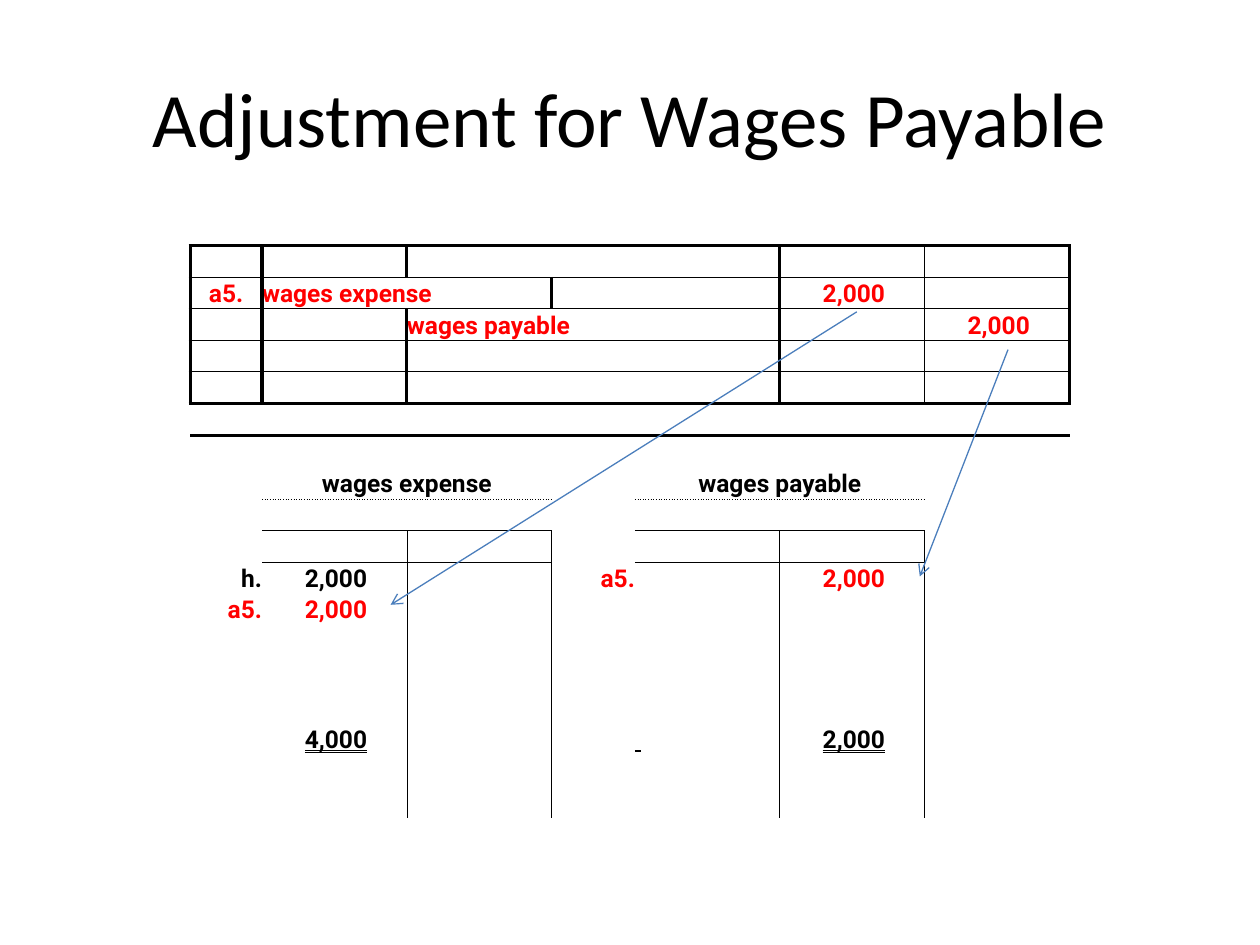
from collections import defaultdict
from itertools import product

from lxml.etree import SubElement
from pptx import Presentation
from pptx.dml.color import RGBColor
from pptx.enum.shapes import MSO_CONNECTOR as Connector
from pptx.enum.text import MSO_ANCHOR as Anchor, MSO_UNDERLINE as Underline, PP_ALIGN as Align
from pptx.oxml.ns import qn
from pptx.util import Inches, Pt

COLORS = {"ink": "000000", "entry": "FF0000", "arrow": "4B7EBC"}
WIDTH, HEIGHT = Inches(10), Inches(7.5)
COLUMNS = [0.57, 1.15, 1.15, 0.66, 1.15, 1.15, 1.15]
ROWS = [0.25] * 5 + [0.26] + [0.25] * 9 + [0.28] + [0.25] * 2
THIN, THICK = 0.5, 2
AMOUNT_INDENT = Inches(0.34)
NO_GRID_STYLE = "{2D5ABB26-0587-4C30-8999-92F81FD0307C}"


def color(name):
    return RGBColor.from_string(COLORS[name])


def add_title(slide, box, text):
    shape = slide.shapes.add_textbox(*box)
    frame = shape.text_frame
    frame.word_wrap = True
    frame.vertical_anchor = Anchor.MIDDLE
    paragraph = frame.paragraphs[0]
    paragraph.text = text
    paragraph.alignment = Align.CENTER
    paragraph.font.name, paragraph.font.size = "Calibri", Pt(44)
    paragraph.font.color.rgb = color("ink")


def add_ledger(slide, left, top):
    """Add the bare grid that carries the journal and both accounts."""
    table = slide.shapes.add_table(
        len(ROWS), len(COLUMNS), left, top,
        Inches(sum(COLUMNS)), Inches(sum(ROWS))).table
    table.first_row = table.horz_banding = False
    table._tbl.tblPr.find(qn("a:tableStyleId")).text = NO_GRID_STYLE
    for column, width in zip(table.columns, COLUMNS):
        column.width = Inches(width)
    for row, height in zip(table.rows, ROWS):
        row.height = Inches(height)
    for cell in table.iter_cells():
        cell.margin_left = cell.margin_right = cell.margin_top = cell.margin_bottom = 0
        cell.vertical_anchor = Anchor.BOTTOM
        # Small empty lines keep the rows at their height
        SubElement(cell.text_frame.paragraphs[0]._p, qn("a:endParaRPr"), sz="1200")
    return table


def write(table, row, column, text, ink="ink", align=Align.LEFT, span=1):
    cell = table.cell(row, column)
    if span > 1:
        cell.merge(table.cell(row, column + span - 1))
    paragraph = cell.text_frame.paragraphs[0]
    paragraph.text = text
    paragraph.alignment = align
    font = paragraph.font
    font.name, font.size, font.bold = "Roboto", Pt(14), True
    font.color.rgb = color(ink)
    return paragraph


def write_amount(table, row, column, text, ink="ink"):
    paragraph = write(table, row, column, text, ink)
    paragraph._p.get_or_add_pPr().set("marL", str(AMOUNT_INDENT))
    paragraph._p.get_or_add_pPr().set("indent", "0")


def write_total(table, row, column, text):
    """Write a total whose double underline starts at the cell's left side."""
    paragraph = write(table, row, column, "\t" + text)
    paragraph.runs[0].font.underline = Underline.DOUBLE_LINE
    properties = paragraph._p.get_or_add_pPr()
    stops = properties.makeelement(qn("a:tabLst"), {})
    SubElement(stops, qn("a:tab"), pos=str(AMOUNT_INDENT), algn="l")
    properties.find(qn("a:defRPr")).addprevious(stops)


def rule_across(borders, edge, columns, width=THIN, dash="solid"):
    for column in columns:
        borders[edge - 1, column]["B"] = borders[edge, column]["T"] = (width, dash)


def rule_down(borders, edge, rows, width=THIN, dash="solid"):
    for row in rows:
        borders[row, edge - 1]["R"] = borders[row, edge]["L"] = (width, dash)


def draw_borders(table, borders):
    for row, column in product(range(len(ROWS)), range(len(COLUMNS))):
        cell = table.cell(row, column)
        properties = cell._tc.get_or_add_tcPr()
        for side in "LRTB":
            if side in borders[row, column]:
                width, dash = borders[row, column][side]
                line = SubElement(properties, qn("a:ln" + side), w=str(Pt(width)))
                fill = SubElement(line, qn("a:solidFill"))
                SubElement(fill, qn("a:srgbClr"), val=COLORS["ink"])
                SubElement(line, qn("a:prstDash"), val=dash)
        cell.fill.background()


def fill_journal(table, borders, rows):
    columns = range(len(COLUMNS))
    first, end = rows.start, rows.stop
    for edge in range(first + 1, end):
        rule_across(borders, edge, columns)
    rule_down(borders, 6, rows)
    for edge in (first, end):
        rule_across(borders, edge, columns, THICK)
    for edge in (0, 1, 5, 7):
        rule_down(borders, edge, rows, THICK)
    write(table, first + 1, 0, "a5.", "entry", Align.CENTER)
    write(table, first + 1, 1, "wages expense", "entry", span=2)
    write_amount(table, first + 1, 5, "2,000", "entry")
    write(table, first + 2, 2, "wages payable", "entry", span=2)
    write_amount(table, first + 2, 6, "2,000", "entry")


def fill_account(table, borders, rows, left, name, side, entries, total):
    """Fill a T-account; side is 0 for debit and 1 for credit."""
    first, columns = rows.start, (left, left + 1)
    write(table, first, left, name, align=Align.CENTER, span=2)
    rule_across(borders, first + 1, columns, dash="sysDot")
    rule_across(borders, first + 2, columns)
    rule_down(borders, left + 1, range(first + 2, rows.stop))
    for row, (label, amount, ink) in enumerate(entries, first + 3):
        write(table, row, left - 1, label, ink, Align.RIGHT)
        write_amount(table, row, left + side, amount, ink)
    write_total(table, first + 8, left + side, total)


def add_posting_arrow(slide, start, end):
    """Draw an arrow between two points given as shares of the slide."""
    (x1, y1), (x2, y2) = start, end
    connector = slide.shapes.add_connector(
        Connector.STRAIGHT, int(x1 * WIDTH), int(y1 * HEIGHT),
        int(x2 * WIDTH), int(y2 * HEIGHT))
    connector.line.color.rgb = color("arrow")
    connector.line.width = Pt(0.75)
    SubElement(connector.line._get_or_add_ln(), qn("a:tailEnd"), type="arrow")
    SubElement(connector._element.spPr, qn("a:effectLst"))


def main():
    presentation = Presentation()
    presentation.slide_width, presentation.slide_height = WIDTH, HEIGHT
    slide = presentation.slides.add_slide(presentation.slide_layouts[6])

    add_title(slide, (int(0.05 * WIDTH), int(0.04 * HEIGHT),
                      int(0.9 * WIDTH), Inches(1.25)),
              "Adjustment for Wages Payable")

    # Journal above, the two T-accounts below
    table = add_ledger(slide, Inches(1.51), int(0.26 * HEIGHT))
    borders = defaultdict(dict)
    fill_journal(table, borders, range(0, 5))
    account_rows = range(7, len(ROWS))
    fill_account(table, borders, account_rows, 1, "wages expense", 0,
                 [("h.", "2,000", "ink"), ("a5.", "2,000", "entry")], "4,000")
    fill_account(table, borders, account_rows, 4, "wages payable", 1,
                 [("a5.", "2,000", "entry")], "2,000")
    # Short dash on the debit side of the payable total
    write(table, 15, 4, " ").runs[0].font.underline = True
    draw_borders(table, borders)

    # Postings from journal to accounts
    add_posting_arrow(slide, (0.68, 0.33), (0.31, 0.64))
    add_posting_arrow(slide, (0.8, 0.37), (0.73, 0.61))

    presentation.save("out.pptx")


if __name__ == "__main__":
    main()
